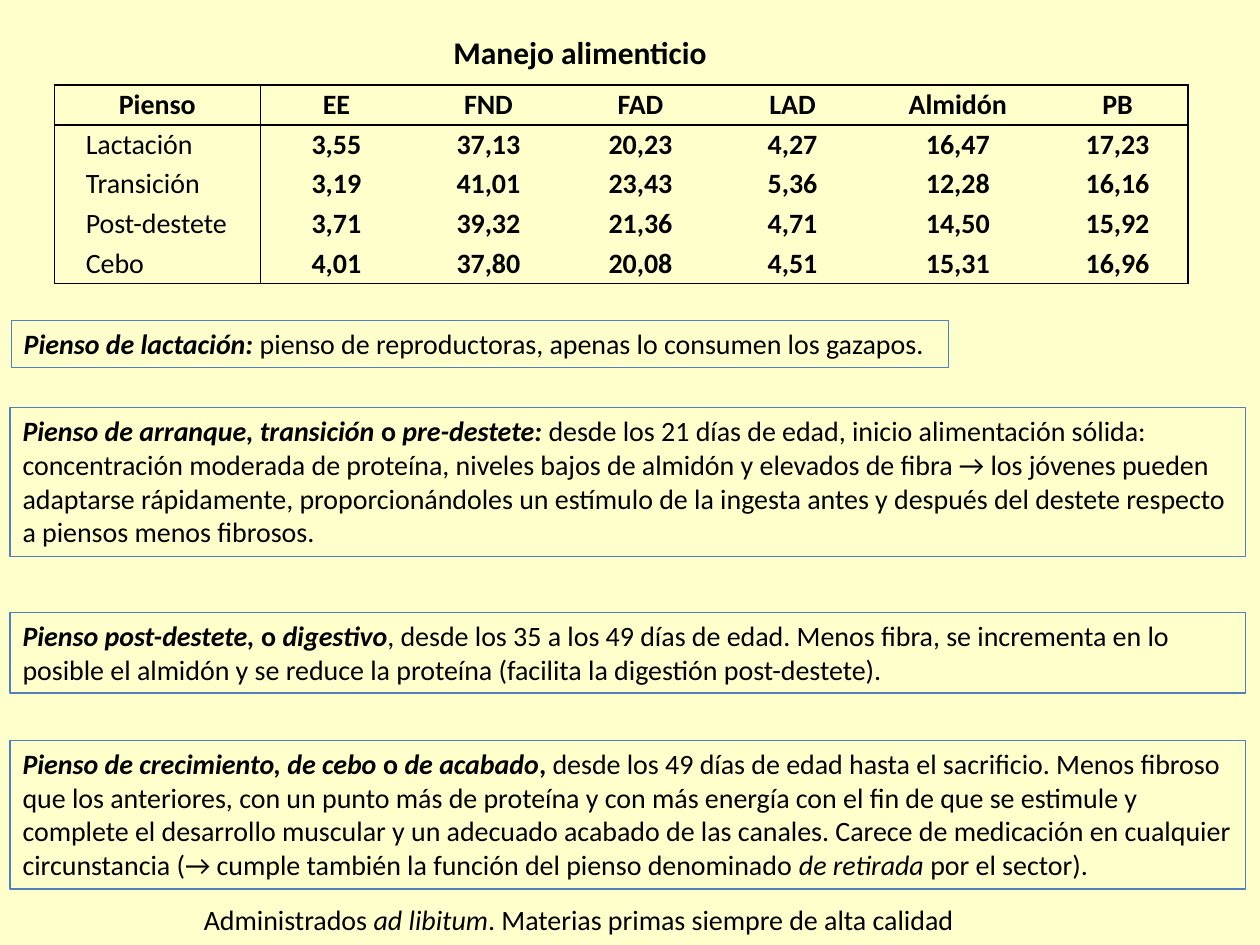
from lxml.etree import SubElement
from pptx import Presentation
from pptx.dml.color import RGBColor
from pptx.enum.text import MSO_ANCHOR, MSO_AUTO_SIZE, PP_ALIGN
from pptx.oxml.ns import qn
from pptx.util import Pt

COLORS = {"background": "FFFFCC", "text": "000000", "outline": "4F81BD"}
FONT = "Calibri"


def add_run(p, text, style="", size=16):
    r = p.add_run()
    r.text = text
    r.font.name = FONT
    r.font.size = Pt(size)
    r.font.bold = "b" in style
    r.font.italic = "i" in style
    r.font.color.rgb = RGBColor.from_string(COLORS["text"])


def set_borders(cell, sides):
    tc_pr = cell._tc.get_or_add_tcPr()
    for i, side in enumerate("LRTB"):
        ln = SubElement(tc_pr, qn(f"a:ln{side}"), w=str(Pt(1)))
        tc_pr.insert(i, ln)
        if side in sides:
            fill = SubElement(ln, qn("a:solidFill"))
            SubElement(fill, qn("a:srgbClr"), val=COLORS["text"])
        else:
            SubElement(ln, qn("a:noFill"))


prs = Presentation()
prs.slide_width, prs.slide_height = Pt(720), Pt(540)
s = prs.slides.add_slide(prs.slide_layouts[6])
s.background.fill.solid()
s.background.fill.fore_color.rgb = RGBColor.from_string(COLORS["background"])

feeds = [
    ((5.8, 233, 706, 85), True, [
        ("Pienso de arranque, transición ", "bi"), ("o", "b"), (" pre-destete: ", "bi"),
        ("desde los 21 días de edad, inicio alimentación sólida: concentración moderada "
         "de proteína, niveles bajos de almidón y elevados de fibra → los jóvenes pueden "
         "adaptarse rápidamente, proporcionándoles un estímulo de la ingesta antes y "
         "después del destete respecto a piensos menos fibrosos.", "")]),
    ((5.8, 350, 706, 46), True, [
        ("Pienso post-destete, ", "bi"), ("o", "b"), (" digestivo", "bi"),
        (", desde los 35 a los 49 días de edad. Menos fibra, se incrementa en lo posible "
         "el almidón y se reduce la proteína (facilita la digestión post-destete).", "")]),
    ((5.8, 423, 706, 85), True, [
        ("Pienso de crecimiento, de cebo ", "bi"), ("o", "b"), (" de acabado", "bi"),
        (",", "b"),
        (" desde los 49 días de edad hasta el sacrificio. Menos fibroso que los "
         "anteriores, con un punto más de proteína y con más energía con el fin de que se "
         "estimule y complete el desarrollo muscular y un adecuado acabado de las canales. "
         "Carece de medicación en cualquier circunstancia (→ cumple también la función del "
         "pienso denominado ", ""), ("de retirada", "i"), (" por el sector).", "")]),
    ((6.5, 183.3, 535.7, 26.6), False, [
        ("Pienso de lactación:", "bi"),
        (" pienso de reproductoras, apenas lo consumen los gazapos.", "")]),
]
for box, wrap, runs in feeds:
    sp = s.shapes.add_textbox(*map(Pt, box))
    sp.line.color.rgb = RGBColor.from_string(COLORS["outline"])
    sp.line.width = Pt(0.75)
    tf = sp.text_frame
    tf.word_wrap = wrap
    tf.auto_size = MSO_AUTO_SIZE.SHAPE_TO_FIT_TEXT
    for text, style in runs:
        add_run(tf.paragraphs[0], text, style)

rows = [
    ("Pienso", "EE", "FND", "FAD", "LAD", "Almidón", "PB"),
    ("Lactación", "3,55", "37,13", "20,23", "4,27", "16,47", "17,23"),
    ("Transición", "3,19", "41,01", "23,43", "5,36", "12,28", "16,16"),
    ("Post-destete", "3,71", "39,32", "21,36", "4,71", "14,50", "15,92"),
    ("Cebo", "4,01", "37,80", "20,08", "4,51", "15,31", "16,96"),
]
widths = [117.8, 86.9, 86.9, 86.9, 86.9, 102, 80.6]
row_height = 22.7
last_row, last_col = len(rows) - 1, len(widths) - 1
table = s.shapes.add_table(len(rows), len(widths), Pt(31), Pt(48.6),
                           Pt(sum(widths)), Pt(row_height * len(rows))).table
table.first_row = table.horz_banding = False
for col, width in zip(table.columns, widths):
    col.width = Pt(width)
for i, values in enumerate(rows):
    table.rows[i].height = Pt(row_height)
    for j, text in enumerate(values):
        cell = table.cell(i, j)
        is_name = i > 0 and j == 0
        cell.fill.background()
        cell.vertical_anchor = MSO_ANCHOR.MIDDLE
        cell.margin_left = Pt(18 if is_name else 3.6)
        cell.margin_right = Pt(3.6)
        cell.margin_top = cell.margin_bottom = Pt(0)
        p = cell.text_frame.paragraphs[0]
        p.alignment = PP_ALIGN.LEFT if is_name else PP_ALIGN.CENTER
        add_run(p, text, "" if is_name else "b")
        set_borders(cell, ("L" if j < 2 else "") + ("R" if j in (0, last_col) else "")
                    + ("T" if i < 2 else "") + ("B" if i in (0, last_row) else ""))

captions = [
    ((252, 15.1, 160.6, 29), 18, PP_ALIGN.LEFT, [("Manejo alimenticio", "b")]),
    ((105, 512, 455, 26.6), 16, PP_ALIGN.CENTER, [
        ("Administrados ", ""), ("ad libitum", "i"),
        (". Materias primas siempre de alta calidad ", "")]),
]
for box, size, align, runs in captions:
    tf = s.shapes.add_textbox(*map(Pt, box)).text_frame
    tf.word_wrap = False
    tf.auto_size = MSO_AUTO_SIZE.SHAPE_TO_FIT_TEXT
    p = tf.paragraphs[0]
    p.alignment = align
    for text, style in runs:
        add_run(p, text, style, size)

prs.save("out.pptx")
